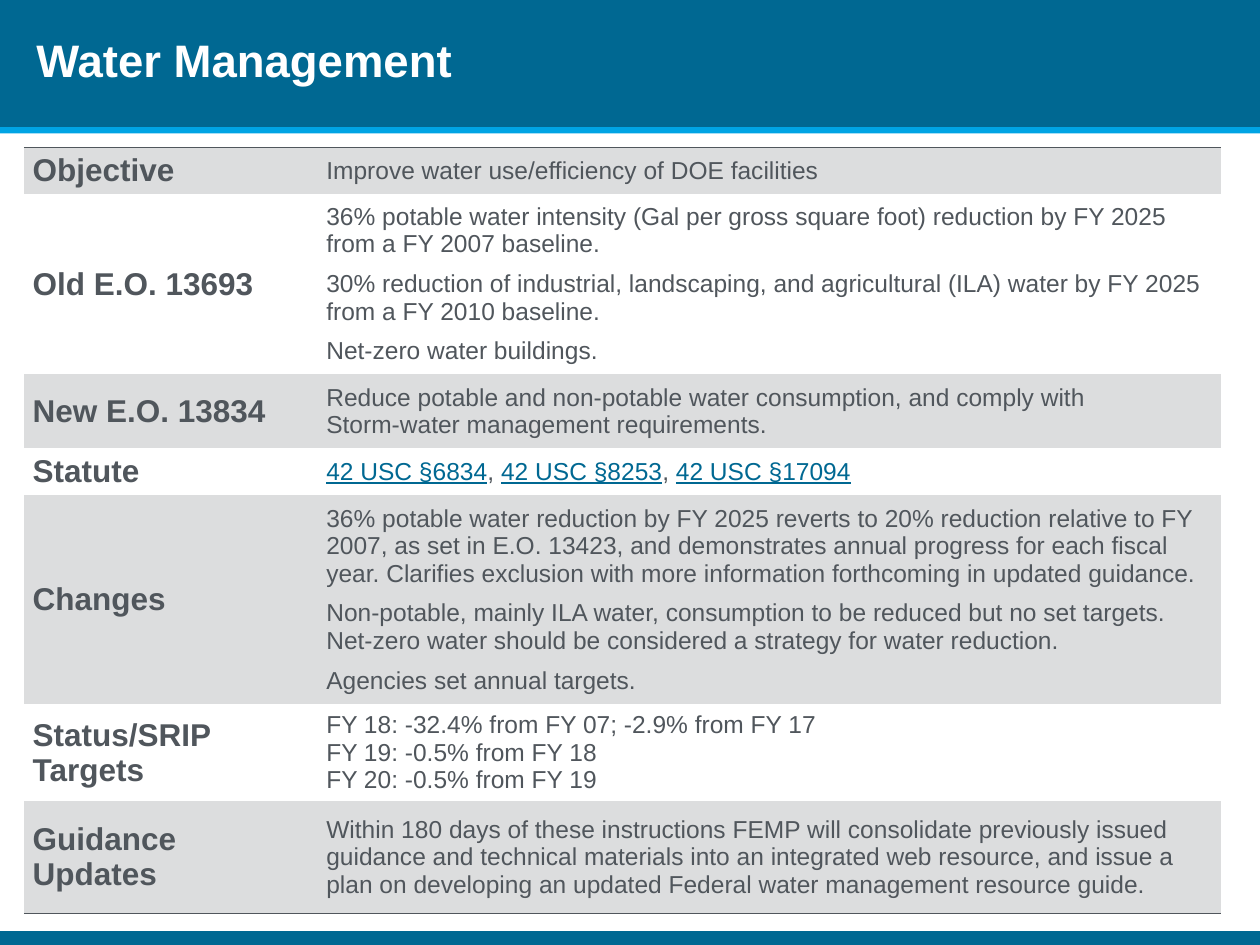
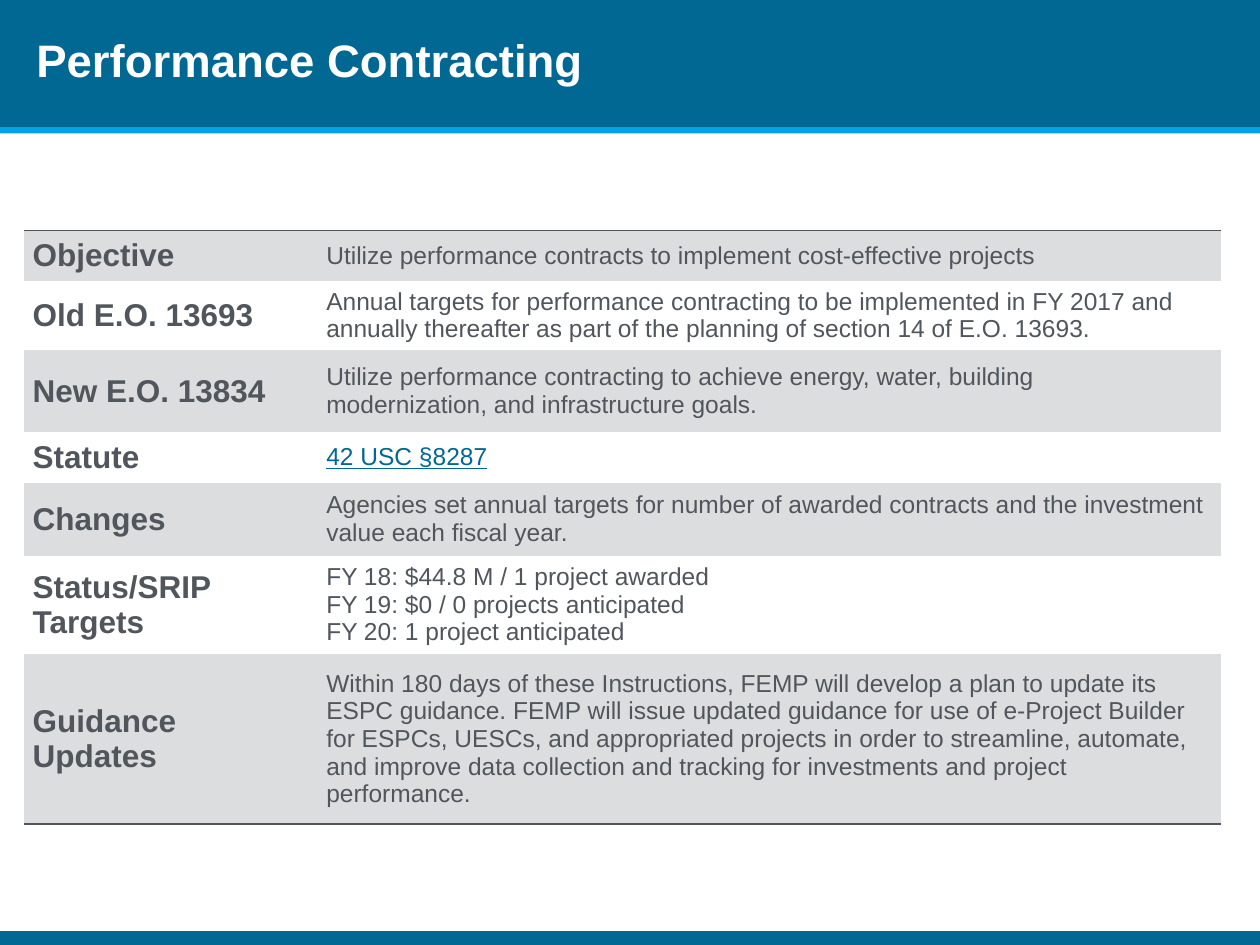
from dataclasses import dataclass

import lxml.etree
import pptx
import pptx.dml.color
import pptx.enum.shapes
import pptx.enum.text
import pptx.oxml.ns
import pptx.presentation
import pptx.shapes.autoshape
import pptx.slide
import pptx.table
import pptx.text.text
import pptx.util

Inches = pptx.util.Inches
Pt = pptx.util.Pt
RGBColor = pptx.dml.color.RGBColor

BLUE = RGBColor(0x00, 0x68, 0x92)
SKY = RGBColor(0x00, 0xA4, 0xE4)
GRAY = RGBColor(0x50, 0x56, 0x5C)
PALE_GRAY = RGBColor(0xDC, 0xDD, 0xDE)
WHITE = RGBColor(0xFF, 0xFF, 0xFF)

TITLE_FONT = {"name": "Arial", "size": Pt(26), "bold": True}
LABEL_FONT = {"name": "Arial", "size": Pt(18), "bold": True}
BODY_FONT = {"name": "Arial", "size": Pt(14), "bold": False}
LINK_FONT = BODY_FONT | {"underline": True}

CELL_FORMAT = {
    "vertical_anchor": pptx.enum.text.MSO_ANCHOR.MIDDLE,
    "margin_left": Inches(0.07),
    "margin_right": Inches(0.07),
    "margin_top": Inches(0.04),
    "margin_bottom": Inches(0.04),
}

LABELS = (
    "Objective",
    "Old E.O. 13693",
    "New E.O. 13834",
    "Statute",
    "Changes",
    "Status/SRIP Targets",
    "Guidance Updates",
)
STATUTE_ROW = LABELS.index("Statute")
COLUMN_WIDTHS = (2.33, 7.17)
TABLE_LEFT = 0.19


@dataclass(frozen=True)
class Band:
    top: float
    height: float
    color: RGBColor


@dataclass(frozen=True)
class Row:
    height: float
    paragraphs: tuple[str, ...]
    gap: int = 0  # points between paragraphs


@dataclass(frozen=True)
class Topic:
    title: str
    table_top: float
    rows: tuple[Row, ...]


BANDS = (Band(0, 1.01, BLUE), Band(7.39, 0.11, BLUE), Band(1.01, 0.05, SKY))

TOPICS = (
    Topic("Water Management", 1.17, (
        Row(0.37, ("Improve water use/efficiency of DOE facilities",)),
        Row(1.43, (
            "36% potable water intensity (Gal per gross square foot) reduction by FY 2025 "
            "from a FY 2007 baseline.",
            "30% reduction of industrial, landscaping, and agricultural (ILA) water by FY 2025 "
            "from a FY 2010 baseline.",
            "Net-zero water buildings.",
        ), gap=7),
        Row(0.59, (
            "Reduce potable and non-potable water consumption, and comply with",
            "Storm-water management requirements.",
        )),
        Row(0.37, ("42 USC §6834, 42 USC §8253, 42 USC §17094",)),
        Row(1.66, (
            "36% potable water reduction by FY 2025 reverts to 20% reduction relative to FY 2007, "
            "as set in E.O. 13423, and demonstrates annual progress for each fiscal year. "
            "Clarifies exclusion with more information forthcoming in updated guidance.",
            "Non-potable, mainly ILA water, consumption to be reduced but no set targets. "
            "Net-zero water should be considered a strategy for water reduction.",
            "Agencies set annual targets.",
        ), gap=7),
        Row(0.77, (
            "FY 18: -32.4% from FY 07; -2.9% from FY 17",
            "FY 19: -0.5% from FY 18",
            "FY 20: -0.5% from FY 19",
        )),
        Row(0.89, (
            "Within 180 days of these instructions FEMP will consolidate previously issued "
            "guidance and technical materials into an integrated web resource, and issue a plan "
            "on developing an updated Federal water management resource guide.",
        )),
    )),
    Topic("Performance Contracting", 1.83, (
        Row(0.4, ("Utilize performance contracts to implement cost-effective projects",)),
        Row(0.55, (
            "Annual targets for performance contracting to be implemented in FY 2017 and "
            "annually thereafter as part of the planning of section 14 of E.O. 13693.",
        )),
        Row(0.65, (
            "Utilize performance contracting to achieve energy, water, building",
            "modernization, and infrastructure goals.",
        )),
        Row(0.4, ("42 USC §8287",)),
        Row(0.58, (
            "Agencies set annual targets for number of awarded contracts and the investment "
            "value each fiscal year.",
        )),
        Row(0.76, (
            "FY 18: $44.8 M / 1 project awarded",
            "FY 19: $0 / 0 projects anticipated",
            "FY 20: 1 project anticipated",
        )),
        Row(1.35, (
            "Within 180 days of these Instructions, FEMP will develop a plan to update its ESPC "
            "guidance. FEMP will issue updated guidance for use of e-Project Builder for ESPCs, "
            "UESCs, and appropriated projects in order to streamline, automate, and improve data "
            "collection and tracking for investments and project performance.",
        )),
    )),
)


def set_format(target: object, values: dict) -> None:
    for name, value in values.items():
        setattr(target, name, value)


def add_span(para: pptx.text.text._Paragraph, text: str, font: dict, color: RGBColor) -> None:
    span = para.add_run()
    span.text = text
    set_format(span.font, font)
    span.font.color.rgb = color


def add_band(page: pptx.slide.Slide, band: Band) -> None:
    shape = page.shapes.add_shape(
        pptx.enum.shapes.MSO_SHAPE.RECTANGLE,
        Inches(0), Inches(band.top), Inches(10), Inches(band.height),
    )
    shape.shadow.inherit = False
    shape.fill.solid()
    shape.fill.fore_color.rgb = band.color
    shape.line.fill.background()


def add_title(page: pptx.slide.Slide, title: str) -> None:
    box = page.shapes.add_textbox(Inches(TABLE_LEFT), Inches(0), Inches(6.19), Inches(0.99))
    frame = box.text_frame
    frame.word_wrap = True
    frame.vertical_anchor = pptx.enum.text.MSO_ANCHOR.MIDDLE
    para = frame.paragraphs[0]
    para.line_spacing = Pt(28)
    add_span(para, title, TITLE_FONT, WHITE)


def set_borders(cell: pptx.table._Cell, ruled_sides: set[str]) -> None:
    """Rule the given sides (L, R, T, B) and clear the others; call after the fill is set."""
    properties = cell._tc.get_or_add_tcPr()
    for position, side in enumerate("LRTB"):
        line = lxml.etree.Element(pptx.oxml.ns.qn(f"a:ln{side}"), w=str(Pt(1)))
        if side in ruled_sides:
            fill = lxml.etree.SubElement(line, pptx.oxml.ns.qn("a:solidFill"))
            lxml.etree.SubElement(fill, pptx.oxml.ns.qn("a:srgbClr"), val=str(GRAY))
        else:
            lxml.etree.SubElement(line, pptx.oxml.ns.qn("a:noFill"))
        properties.insert(position, line)


def style_cell(cell: pptx.table._Cell, row_index: int) -> None:
    set_format(cell, CELL_FORMAT)
    if row_index % 2 == 0:
        cell.fill.solid()
        cell.fill.fore_color.rgb = PALE_GRAY
    else:
        cell.fill.background()
    ruled_sides = set()
    if row_index == 0:
        ruled_sides.add("T")
    if row_index == len(LABELS) - 1:
        ruled_sides.add("B")
    set_borders(cell, ruled_sides)


def write_citations(para: pptx.text.text._Paragraph, citations: str) -> None:
    for index, citation in enumerate(citations.split(", ")):
        if index:
            add_span(para, ", ", BODY_FONT, GRAY)
        add_span(para, citation, LINK_FONT, BLUE)


def write_body(cell: pptx.table._Cell, row: Row, is_statute: bool) -> None:
    frame = cell.text_frame
    for index, text in enumerate(row.paragraphs):
        para = frame.add_paragraph() if index else frame.paragraphs[0]
        if index and row.gap:
            para.space_before = Pt(row.gap)
        if is_statute:
            write_citations(para, text)
        else:
            add_span(para, text, BODY_FONT, GRAY)


def add_topic_table(page: pptx.slide.Slide, topic: Topic) -> None:
    table = page.shapes.add_table(
        len(LABELS), len(COLUMN_WIDTHS),
        Inches(TABLE_LEFT), Inches(topic.table_top),
        Inches(sum(COLUMN_WIDTHS)), Inches(sum(row.height for row in topic.rows)),
    ).table
    set_format(table, {"first_row": False, "horz_banding": False})
    for column, width in zip(table.columns, COLUMN_WIDTHS):
        column.width = Inches(width)
    for index, (label, row) in enumerate(zip(LABELS, topic.rows)):
        table.rows[index].height = Inches(row.height)
        label_cell, body_cell = table.rows[index].cells
        for cell in (label_cell, body_cell):
            style_cell(cell, index)
        add_span(label_cell.text_frame.paragraphs[0], label, LABEL_FONT, GRAY)
        write_body(body_cell, row, index == STATUTE_ROW)


def add_topic_page(deck: pptx.presentation.Presentation, topic: Topic) -> None:
    page = deck.slides.add_slide(deck.slide_layouts[6])
    for band in BANDS:
        add_band(page, band)
    add_topic_table(page, topic)
    add_title(page, topic.title)


def main() -> None:
    deck = pptx.Presentation()
    deck.slide_width = Inches(10)
    deck.slide_height = Inches(7.5)
    for topic in TOPICS:
        add_topic_page(deck, topic)
    deck.save("out.pptx")


if __name__ == "__main__":
    main()
